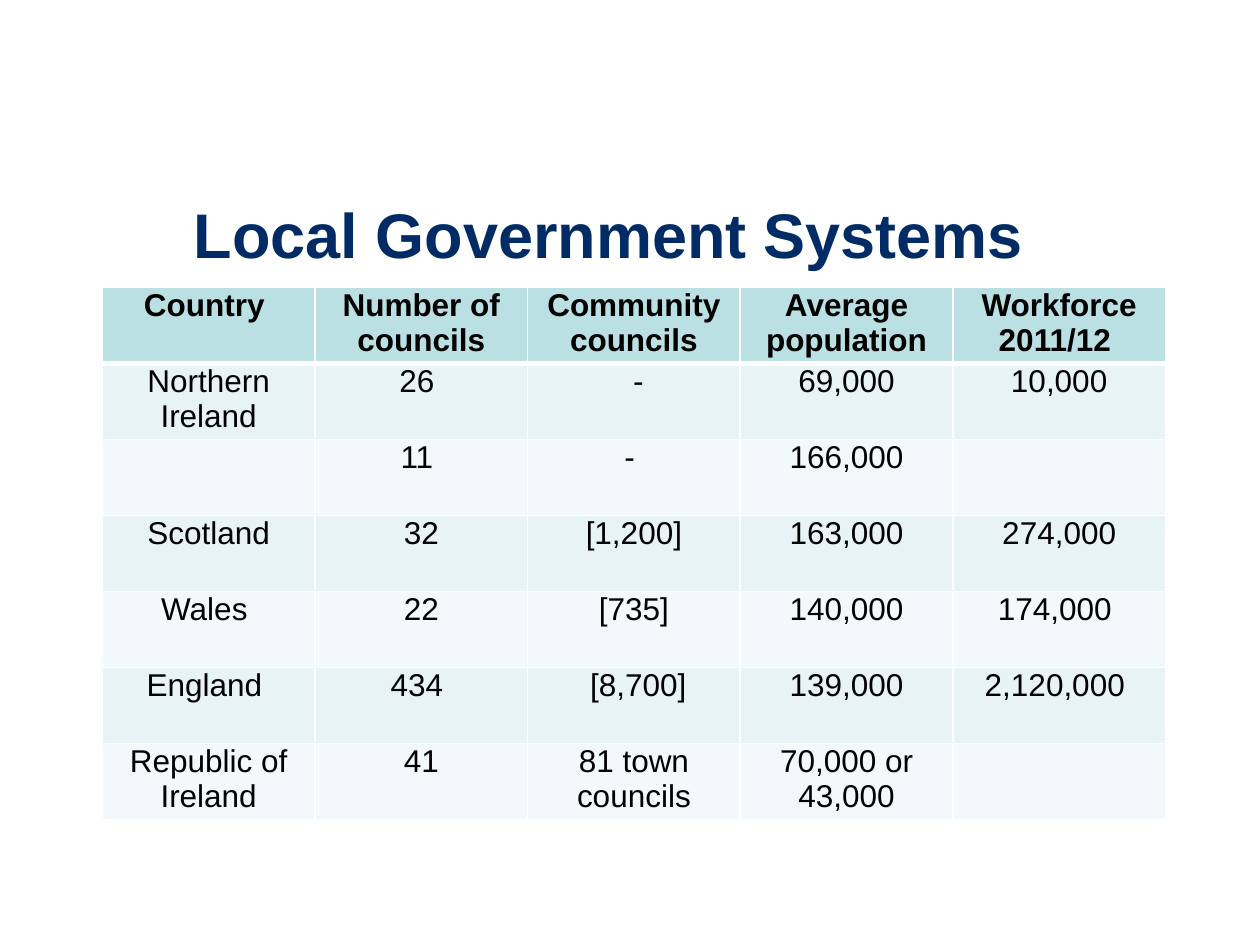
from lxml.etree import SubElement
from pptx import Presentation
from pptx.dml.color import RGBColor
from pptx.enum.text import MSO_ANCHOR, PP_ALIGN
from pptx.oxml.ns import qn
from pptx.util import Pt

TITLE = "Local Government Systems"
ROWS = [
    ("Country ", "Number of councils", "Community councils", "Average population", "Workforce 2011/12 "),
    ("Northern Ireland", "26 ", " -", "69,000", "10,000"),
    ("", "11 ", "- ", "166,000", ""),
    ("Scotland", "32", "[1,200]", "163,000", "274,000"),
    ("Wales ", "22", "[735]", "140,000", "174,000 "),
    ("England ", "434 ", " [8,700]", "139,000", "2,120,000 "),
    ("Republic of Ireland", "41", "81 town councils", "70,000 or 43,000", ""),
]
COLORS = {
    "title": "002B65",
    "text": "000000",
    "header": "BBE0E3",
    "odd": "E7F3F4",
    "even": "F3F9FA",
    "border": "FFFFFF",
}
FONT = "Arial"
TABLE_LEFT, TABLE_TOP, TABLE_WIDTH, TABLE_HEIGHT = 58.5, 164.4, 607.5, 304


def format_paragraph(paragraph, size, color, bold):
    for run in paragraph.runs:
        run.font.name = FONT
        run.font.size = Pt(size)
        run.font.bold = bold
        run.font.color.rgb = RGBColor.from_string(COLORS[color])


def set_borders(cell, widths):
    properties = cell._tc.get_or_add_tcPr()
    for index, (side, width) in enumerate(widths.items()):
        line = SubElement(properties, qn(f"a:ln{side}"), w=str(Pt(width)))
        fill = SubElement(line, qn("a:solidFill"))
        SubElement(fill, qn("a:srgbClr"), val=COLORS["border"])
        properties.remove(line)
        properties.insert(index, line)


def add_title(slide):
    box = slide.shapes.add_textbox(Pt(103.7), Pt(109.4), Pt(562.3), Pt(53.3))
    text_frame = box.text_frame
    text_frame.word_wrap = True
    text_frame.vertical_anchor = MSO_ANCHOR.MIDDLE
    text_frame.text = TITLE
    paragraph = text_frame.paragraphs[0]
    paragraph.line_spacing = 0.9
    format_paragraph(paragraph, 36, "title", True)


def fill_cell(cell, text, row_index):
    is_header = row_index == 0
    fill_name = "header" if is_header else "odd" if row_index % 2 else "even"
    cell.fill.solid()
    cell.fill.fore_color.rgb = RGBColor.from_string(COLORS[fill_name])
    cell.margin_left = cell.margin_right = Pt(5)
    cell.margin_top = cell.margin_bottom = Pt(0)
    cell.text_frame.text = text
    paragraph = cell.text_frame.paragraphs[0]
    paragraph.alignment = PP_ALIGN.CENTER
    format_paragraph(paragraph, 18, "text", is_header)
    set_borders(cell, {
        "L": 1,
        "R": 1,
        "T": 3 if row_index == 1 else 1,
        "B": 3 if is_header else 1,
    })


def add_council_table(slide):
    table = slide.shapes.add_table(
        len(ROWS), len(ROWS[0]),
        Pt(TABLE_LEFT), Pt(TABLE_TOP), Pt(TABLE_WIDTH), Pt(TABLE_HEIGHT),
    ).table
    for column in table.columns:
        column.width = Pt(TABLE_WIDTH / len(ROWS[0]))
    for row_index, texts in enumerate(ROWS):
        table.rows[row_index].height = Pt(TABLE_HEIGHT / len(ROWS))
        for column_index, text in enumerate(texts):
            fill_cell(table.cell(row_index, column_index), text, row_index)


def main():
    presentation = Presentation()
    presentation.slide_width, presentation.slide_height = Pt(720), Pt(540)
    slide = presentation.slides.add_slide(presentation.slide_layouts[6])
    add_title(slide)
    add_council_table(slide)
    presentation.save("out.pptx")


if __name__ == "__main__":
    main()
